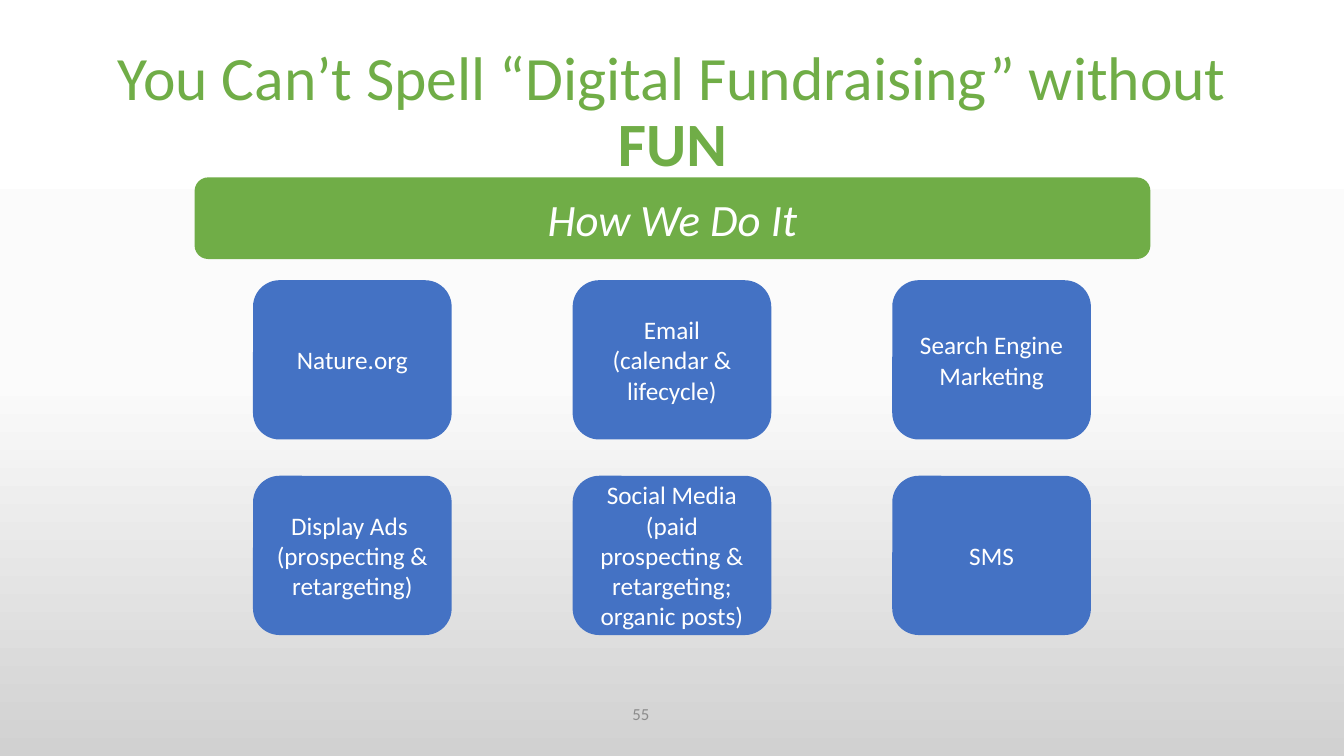
"""Build the digital fundraising slide with its grid of channels."""
from copy import deepcopy
from dataclasses import dataclass

from pptx import Presentation
from pptx.dml.color import RGBColor
from pptx.enum.shapes import MSO_SHAPE
from pptx.enum.text import MSO_ANCHOR, PP_ALIGN
from pptx.oxml.ns import qn
from pptx.util import Inches, Pt

ROUNDED = MSO_SHAPE.ROUNDED_RECTANGLE
MIDDLE = MSO_ANCHOR.MIDDLE
CENTER, RIGHT = PP_ALIGN.CENTER, PP_ALIGN.RIGHT

TITLE = ["You Can’t Spell “Digital Fundraising” without ", "FUN"]
BANNER = "How We Do It"
CHANNELS = [
    ["Nature.org", "Email\n(calendar & lifecycle)", "Search Engine Marketing"],
    [
        "Display Ads \n(prospecting & retargeting)",
        "Social Media\n(paid prospecting & retargeting; organic posts)",
        "SMS",
    ],
]
PAGE_NUMBER = "55"

TITLE_AREA = (0.92, 0.4, 11.5, 1.45)
BANNER_AREA = (1.93, 1.76, 9.48, 0.81)
NUMBER_AREA = (3.54, 6.88, 3, 0.4)
GRID_LEFT, GRID_TOP = 2.51, 2.78
COLUMN_STEP, ROW_STEP = 3.17, 1.94
CARD_WIDTH, CARD_HEIGHT = 1.97, 1.58


@dataclass(frozen=True)
class Theme:
    font: str = "Calibri"
    green: str = "70AD47"
    blue: str = "4472C4"
    white: str = "FFFFFF"
    gray: str = "8C8C8C"
    backdrop: tuple = ((0, "FFFFFF"), (0.5, "FBFBFB"), (1, "D1D1D1"))
    title_size: int = 44
    banner_size: int = 32
    card_size: int = 18
    number_size: int = 12


THEME = Theme()


def style_text(frame, size, color, align=CENTER, italic=None):
    frame.word_wrap = True
    frame.vertical_anchor = MIDDLE
    for para in frame.paragraphs:
        para.alignment = align
        for span in para.runs:
            span.font.name = THEME.font
            span.font.size = Pt(size)
            span.font.italic = italic
            span.font.color.rgb = RGBColor.from_string(color)


def paint_background(page):
    fill = page.background.fill
    fill.gradient()
    fill.gradient_angle = 270
    stop_list = page.element.find(".//" + qn("a:gsLst"))
    stop_list.append(deepcopy(stop_list[-1]))
    for stop, (position, color) in zip(fill.gradient_stops, THEME.backdrop):
        stop.position = position
        stop.color.rgb = RGBColor.from_string(color)


def add_title(page):
    title = page.shapes.title
    title.left, title.top, title.width, title.height = map(Inches, TITLE_AREA)
    para = title.text_frame.paragraphs[0]
    para.line_spacing = 0.9
    for words in TITLE:
        para.add_run().text = words
    style_text(title.text_frame, THEME.title_size, THEME.green)
    para.runs[-1].font.bold = True


def add_box(page, area, text, color, size, italic=None):
    box = page.shapes.add_shape(ROUNDED, *map(Inches, area))
    box.shadow.inherit = False
    box.fill.solid()
    box.fill.fore_color.rgb = RGBColor.from_string(color)
    box.line.fill.background()
    box.text_frame.text = text
    style_text(box.text_frame, size, THEME.white, italic=italic)


def add_channels(page):
    for row, names in enumerate(CHANNELS):
        for column, name in enumerate(names):
            left = GRID_LEFT + column * COLUMN_STEP
            top = GRID_TOP + row * ROW_STEP
            area = (left, top, CARD_WIDTH, CARD_HEIGHT)
            add_box(page, area, name, THEME.blue, THEME.card_size)


def add_page_number(page):
    box = page.shapes.add_textbox(*map(Inches, NUMBER_AREA))
    box.text_frame.text = PAGE_NUMBER
    style_text(box.text_frame, THEME.number_size, THEME.gray, RIGHT)


def main():
    deck = Presentation()
    deck.slide_width, deck.slide_height = Inches(13.33), Inches(7.5)
    page = deck.slides.add_slide(deck.slide_layouts[5])
    paint_background(page)
    add_title(page)
    add_channels(page)
    add_box(page, BANNER_AREA, BANNER, THEME.green, THEME.banner_size, italic=True)
    add_page_number(page)
    deck.save("out.pptx")


if __name__ == "__main__":
    main()
